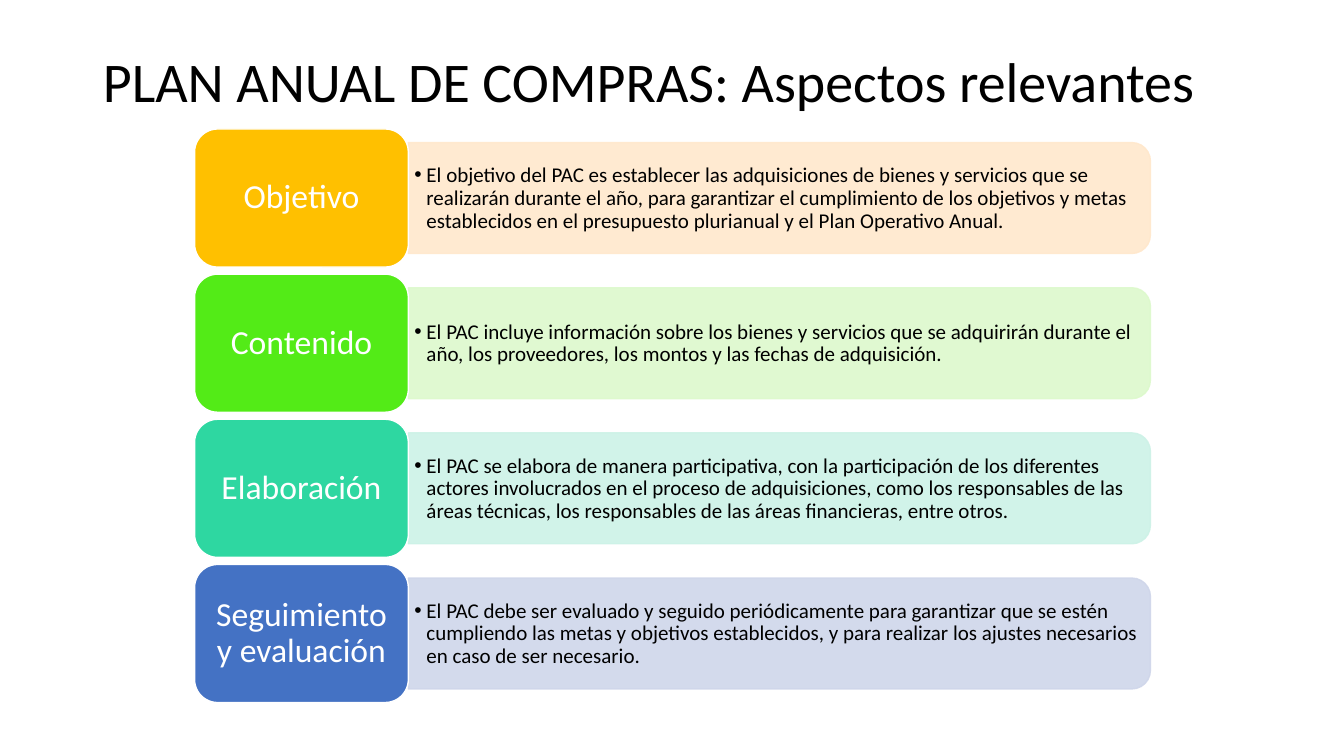
from dataclasses import dataclass

from lxml import etree
from pptx import Presentation
from pptx.dml.color import RGBColor
from pptx.enum.shapes import MSO_SHAPE
from pptx.enum.text import MSO_ANCHOR, PP_ALIGN
from pptx.oxml.ns import qn
from pptx.util import Inches, Pt

ROUNDED = MSO_SHAPE.ROUNDED_RECTANGLE
ROUNDED_TOP = MSO_SHAPE.ROUND_2_SAME_RECTANGLE
MIDDLE = MSO_ANCHOR.MIDDLE
LEFT, CENTER = PP_ALIGN.LEFT, PP_ALIGN.CENTER


@dataclass(frozen=True)
class Theme:
    font: str = "Calibri"
    title_size: int = 40
    label_size: int = 24
    detail_size: int = 15
    dark: str = "000000"
    light: str = "FFFFFF"
    panel_opacity: int = 90


THEME = Theme()
LABEL_WIDTH = 2.12
PANEL_HEIGHT = 1.1
ROW_HEIGHT = 1.37
ROW_PITCH = 1.44

# Label, label colour, panel colour, detail
ASPECTS = [
    ("Objetivo", "FFC000", "FFE8CC",
     "El objetivo del PAC es establecer las adquisiciones de bienes y servicios que se "
     "realizarán durante el año, para garantizar el cumplimiento de los objetivos y metas "
     "establecidos en el presupuesto plurianual y el Plan Operativo Anual."),
    ("Contenido", "53EB17", "DDF9CC",
     "El PAC incluye información sobre los bienes y servicios que se adquirirán durante el "
     "año, los proveedores, los montos y las fechas de adquisición."),
    ("Elaboración", "2ED7A1", "CDF2E7",
     "El PAC se elabora de manera participativa, con la participación de los diferentes "
     "actores involucrados en el proceso de adquisiciones, como los responsables de las "
     "áreas técnicas, los responsables de las áreas financieras, entre otros."),
    ("Seguimiento y evaluación", "4472C4", "CFD6EA",
     "El PAC debe ser evaluado y seguido periódicamente para garantizar que se estén "
     "cumpliendo las metas y objetivos establecidos, y para realizar los ajustes necesarios "
     "en caso de ser necesario."),
]


def write(frame, text, size, color, align):
    frame.word_wrap = True
    frame.vertical_anchor = MIDDLE
    paragraph = frame.paragraphs[0]
    paragraph.alignment = align
    paragraph.line_spacing = 0.9
    run = paragraph.add_run()
    run.text = text
    run.font.name = THEME.font
    run.font.size = Pt(size)
    run.font.color.rgb = RGBColor.from_string(color)
    return paragraph


def add_bullet(paragraph, indent):
    properties = paragraph._p.get_or_add_pPr()
    properties.set("marL", str(Inches(indent)))
    properties.set("indent", str(-Inches(indent)))
    etree.SubElement(properties, qn("a:buFont")).set("typeface", "Arial")
    etree.SubElement(properties, qn("a:buChar")).set("char", "•")


def add_block(slide, kind, left, top, width, height, fill, line):
    block = slide.shapes.add_shape(
        kind, Inches(left), Inches(top), Inches(width), Inches(height))
    block.shadow.inherit = False
    block.fill.solid()
    block.fill.fore_color.rgb = RGBColor.from_string(fill)
    block.line.color.rgb = RGBColor.from_string(line)
    block.line.width = Pt(1)
    return block


def add_title(slide, text, left, top, width, height):
    title = slide.shapes.title
    title.left, title.top = Inches(left), Inches(top)
    title.width, title.height = Inches(width), Inches(height)
    write(title.text_frame, text, THEME.title_size, THEME.dark, LEFT)


def add_panel(slide, left, top, width, height, color, detail):
    """Place a panel rounded on its right side, with its bulleted detail."""
    # The shape is rounded on top, so it is built upright and turned about its centre.
    panel = add_block(slide, ROUNDED_TOP, left + (width - height) / 2,
                      top + (height - width) / 2, height, width, color, color)
    panel.rotation = 90
    for solid in panel._element.spPr.iter(qn("a:solidFill")):
        alpha = etree.SubElement(solid[0], qn("a:alpha"))
        alpha.set("val", str(THEME.panel_opacity * 1000))

    caption = slide.shapes.add_textbox(
        Inches(left), Inches(top + 0.06), Inches(width - 0.05), Inches(height - 0.11))
    frame = caption.text_frame
    frame.margin_left = frame.margin_right = Inches(0.06)
    frame.margin_top = frame.margin_bottom = Inches(0.03)
    paragraph = write(frame, detail, THEME.detail_size, THEME.dark, LEFT)
    paragraph.level = 1
    add_bullet(paragraph, 0.12)


def add_aspect(slide, left, top, width, aspect):
    name, label_color, panel_color, detail = aspect
    add_panel(slide, left + LABEL_WIDTH, top + (ROW_HEIGHT - PANEL_HEIGHT) / 2,
              width - LABEL_WIDTH, PANEL_HEIGHT, panel_color, detail)
    label = add_block(slide, ROUNDED, left, top, LABEL_WIDTH, ROW_HEIGHT,
                      label_color, THEME.light)
    write(label.text_frame, name, THEME.label_size, THEME.light, CENTER)


def add_aspect_list(slide, left, top, width):
    for row, aspect in enumerate(ASPECTS):
        add_aspect(slide, left, top + row * ROW_PITCH, width, aspect)


def main():
    deck = Presentation()
    deck.slide_width, deck.slide_height = Inches(13.33), Inches(7.5)
    slide = deck.slides.add_slide(deck.slide_layouts.get_by_name("Title Only"))
    add_title(slide, "PLAN ANUAL DE COMPRAS: Aspectos relevantes", 0.92, 0.4, 11.5, 0.88)
    add_aspect_list(slide, 1.93, 1.28, 9.48)
    deck.save("out.pptx")


if __name__ == "__main__":
    main()
